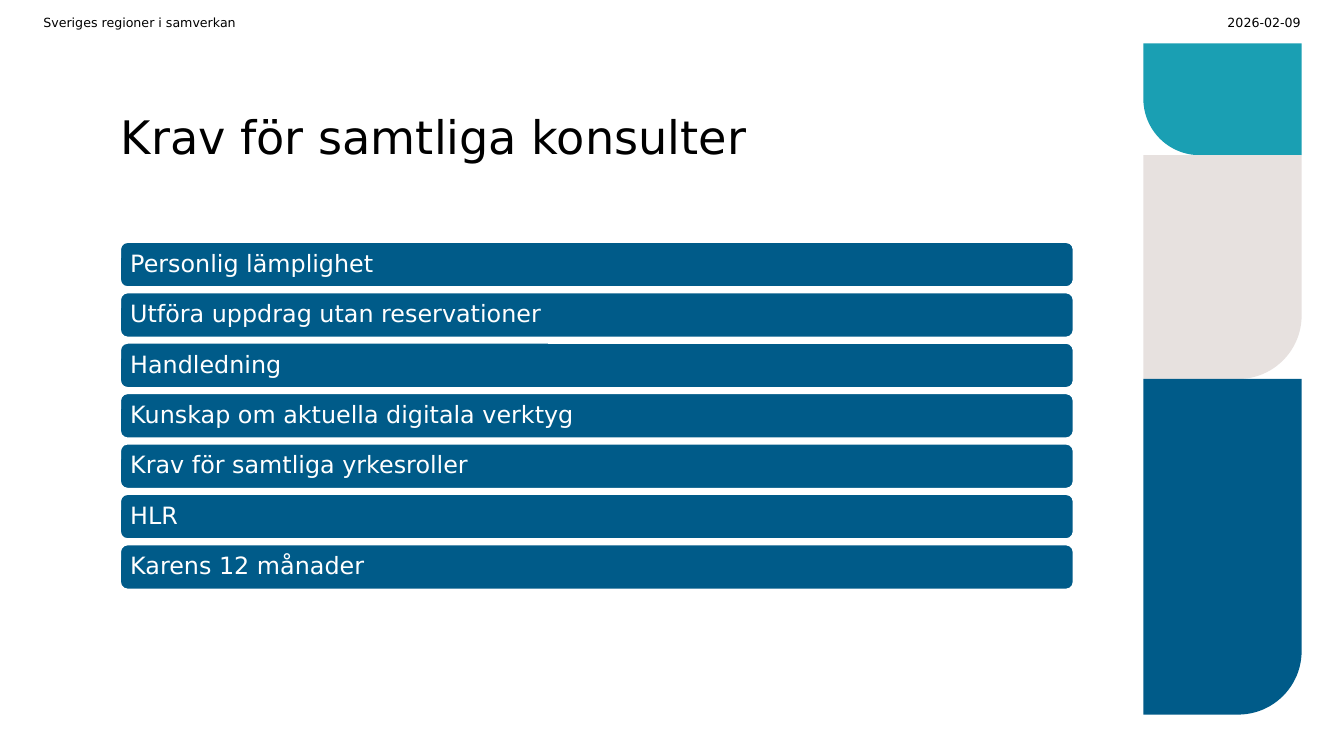
from math import cos, pi, sin

from pptx import Presentation
from pptx.dml.color import RGBColor
from pptx.enum.shapes import MSO_SHAPE as Shape
from pptx.enum.text import MSO_ANCHOR as Anchor, PP_ALIGN as Align
from pptx.util import Inches, Pt

FONT = "DejaVu Sans"
COLORS = {"teal": "1A9FB3", "sand": "E7E1DF", "blue": "005B89",
          "white": "FFFFFF", "black": "000000"}

# text, box, size, alignment, anchor, line spacing
LABELS = [
    ("Krav för samtliga konsulter", (1.2, 0.47, 9.45, 1.15), 33, Align.LEFT, Anchor.BOTTOM, 1.1),
    ("2026-02-09", (11.92, 0.15, 0.98, 0.15), 9, Align.RIGHT, Anchor.MIDDLE, 1.0),
    ("Sveriges regioner i samverkan", (0.43, 0.15, 4.51, 0.15), 9, Align.LEFT, Anchor.MIDDLE, 1.0),
]
DEMANDS = [
    "Personlig lämplighet",
    "Utföra uppdrag utan reservationer",
    "Handledning",
    "Kunskap om aktuella digitala verktyg",
    "Krav för samtliga yrkesroller",
    "HLR",
    "Karens 12 månader",
]
# color, height, corner radius, rounded bottom corner
BLOCKS = [
    ("teal", 1.11, 0.56, "left"),
    ("sand", 2.22, 0.63, "right"),
    ("blue", 3.33, 0.63, "right"),
]
BAND_LEFT, BAND_RIGHT, BAND_TOP = 11.34, 12.91, 0.43
BAR_LEFT, BAR_TOP, BAR_WIDTH, BAR_HEIGHT, BAR_STEP = 1.19, 2.4, 9.46, 0.45, 0.5
ARC_STEPS = 24


def color(name):
    return RGBColor.from_string(COLORS[name])


def paint(shape, name):
    shape.shadow.inherit = False
    shape.fill.solid()
    shape.fill.fore_color.rgb = color(name)


def write(shape, text, size, ink, align, anchor, spacing, inset):
    frame = shape.text_frame
    frame.word_wrap = True
    frame.vertical_anchor = anchor
    frame.margin_left = frame.margin_right = Inches(inset)
    frame.margin_top = frame.margin_bottom = 0
    line = frame.paragraphs[0]
    line.alignment = align
    line.line_spacing = spacing
    run = line.add_run()
    run.text = text
    run.font.size = Pt(size)
    run.font.name = FONT
    run.font.color.rgb = color(ink)


def add_block(shapes, name, top, height, radius, corner):
    """Add a rectangle with one rounded bottom corner."""
    near, far, sign = ((BAND_RIGHT, BAND_LEFT, 1) if corner == "right"
                       else (BAND_LEFT, BAND_RIGHT, -1))
    base = top + height
    mid_x, mid_y = near - sign * radius, base - radius
    turns = [pi / 2 * i / ARC_STEPS for i in range(ARC_STEPS + 1)]
    arc = [(mid_x + sign * radius * cos(t), mid_y + radius * sin(t)) for t in turns]
    points = [(Inches(x), Inches(y)) for x, y in [*arc, (far, base), (far, top)]]
    outline = shapes.build_freeform(Inches(near), Inches(top))
    outline.add_line_segments(points, close=True)
    block = outline.convert_to_shape()
    paint(block, name)
    block.line.fill.background()


def add_bar(shapes, text, top):
    box = map(Inches, (BAR_LEFT, top, BAR_WIDTH, BAR_HEIGHT))
    bar = shapes.add_shape(Shape.ROUNDED_RECTANGLE, *box)
    paint(bar, "blue")
    bar.line.color.rgb = color("white")
    bar.line.width = Pt(1.5)
    write(bar, text, 17, "white", Align.LEFT, Anchor.MIDDLE, 0.9, 0.08)


def main():
    deck = Presentation()
    deck.slide_width, deck.slide_height = Inches(13.33), Inches(7.5)
    shapes = deck.slides.add_slide(deck.slide_layouts[6]).shapes

    top = BAND_TOP
    for name, height, radius, corner in BLOCKS:
        add_block(shapes, name, top, height, radius, corner)
        top += height

    for text, box, size, align, anchor, spacing in LABELS:
        label = shapes.add_textbox(*map(Inches, box))
        write(label, text, size, "black", align, anchor, spacing, 0)

    for i, text in enumerate(DEMANDS):
        add_bar(shapes, text, BAR_TOP + i * BAR_STEP)

    deck.save("out.pptx")


if __name__ == "__main__":
    main()
